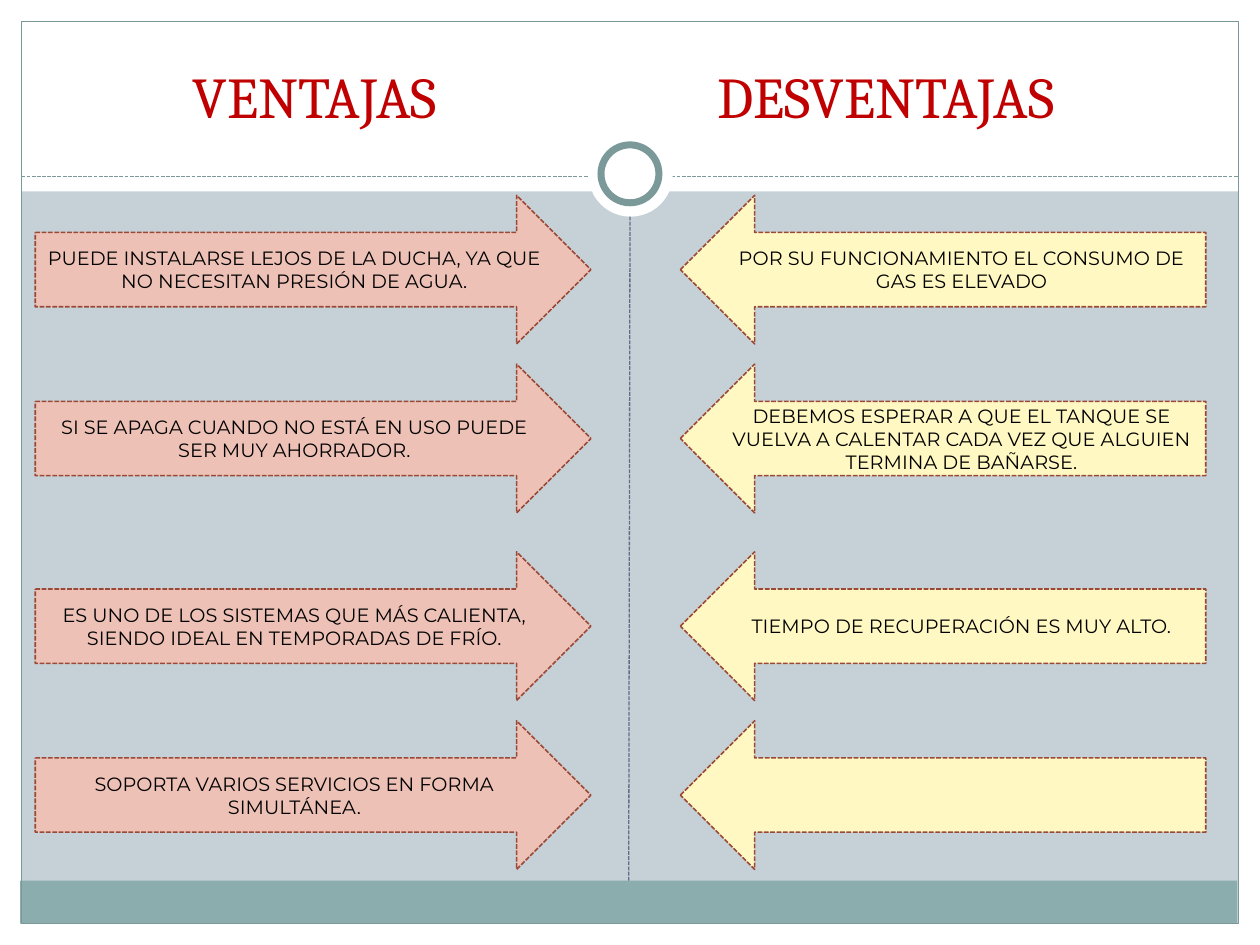
from pptx import Presentation
from pptx.dml.color import RGBColor
from pptx.enum.dml import MSO_LINE
from pptx.enum.shapes import MSO_CONNECTOR, MSO_SHAPE
from pptx.enum.text import MSO_ANCHOR, PP_ALIGN
from pptx.oxml.ns import qn
from pptx.util import Inches, Pt

RECT, OVAL = MSO_SHAPE.RECTANGLE, MSO_SHAPE.OVAL
RIGHT, LEFT = MSO_SHAPE.RIGHT_ARROW, MSO_SHAPE.LEFT_ARROW
DASH = MSO_LINE.SQUARE_DOT
WHITE, TEAL, RUST = "FFFFFF", "7C999A", "9B4936"
TOPS = [1.55, 2.89, 4.38, 5.72]
PROS = [
    "PUEDE INSTALARSE LEJOS DE LA DUCHA, YA QUE NO NECESITAN PRESIÓN DE AGUA.",
    "SI SE APAGA CUANDO NO ESTÁ EN USO PUEDE SER MUY AHORRADOR.",
    "ES UNO DE LOS SISTEMAS QUE MÁS CALIENTA, SIENDO IDEAL EN TEMPORADAS DE FRÍO.",
    "SOPORTA VARIOS SERVICIOS EN FORMA SIMULTÁNEA.",
]
CONS = [
    "POR SU FUNCIONAMIENTO EL CONSUMO DE GAS ES ELEVADO",
    "DEBEMOS ESPERAR A QUE EL TANQUE SE VUELVA A CALENTAR CADA VEZ QUE ALGUIEN TERMINA DE BAÑARSE.",
    "TIEMPO DE RECUPERACIÓN ES MUY ALTO.",
    "",
]


def color(text):
    """Turn a hex string into a colour."""
    return RGBColor.from_string(text)


def stroke(line, hue, width, dash=None):
    """Style an outline or a connector line."""
    line.color.rgb = color(hue)
    line.width = Pt(width)
    if dash:
        line.dash_style = dash


def shape(slide, kind, box, fill=None, hue=None, width=0.75, dash=None):
    """Add a preset shape with optional fill and outline."""
    item = slide.shapes.add_shape(kind, *map(Inches, box))
    item.shadow.inherit = False
    if fill:
        item.fill.solid()
        item.fill.fore_color.rgb = color(fill)
    else:
        item.fill.background()
    if hue:
        stroke(item.line, hue, width, dash)
    else:
        item.line.fill.background()
    return item


def rule(slide, start, end, hue):
    """Add a thin dashed line."""
    line = slide.shapes.add_connector(
        MSO_CONNECTOR.STRAIGHT, *map(Inches, start + end))
    stroke(line.line, hue, 0.75, DASH)
    props = line._element.spPr
    props.append(props.makeelement(qn("a:effectLst"), {}))
    return line


def write(item, text, face, size, hue, anchor):
    """Put one centred paragraph into a shape."""
    frame = item.text_frame
    frame.word_wrap = True
    frame.vertical_anchor = anchor
    para = frame.paragraphs[0]
    para.text = text
    para.alignment = PP_ALIGN.CENTER
    para.font.name = face
    para.font.size = Pt(size)
    para.font.color.rgb = color(hue)


def title(slide, text, left):
    """Add a column heading."""
    box = slide.shapes.add_textbox(*map(Inches, (left, 0.25, 4, 0.83)))
    write(box, text, "Cambria", 33, "C00000", MSO_ANCHOR.BOTTOM)


def column(slide, kind, left, width, fill, texts):
    """Add a column of block arrows."""
    for top, text in zip(TOPS, texts):
        arrow = shape(slide, kind, (left, top, width, 1.18), fill, RUST, 0.9, DASH)
        if text:
            write(arrow, text, "Montserrat", 11, "000000", MSO_ANCHOR.MIDDLE)


def frame(slide):
    """Draw the margins, the footer band, the border and the ring."""
    for box in [(0, 7.33, 10, 0.17), (0, 0, 10, 1.52),
                (0, 0, 0.17, 7.5), (9.83, 0, 0.17, 7.5)]:
        shape(slide, RECT, box, WHITE)
    band = shape(slide, RECT, (0.16, 6.99, 9.66, 0.34), "8CADAE")
    shape(slide, RECT, (0.17, 0.17, 9.66, 7.16), hue=TEAL)
    rule(slide, (0.17, 1.4), (9.83, 1.4), TEAL)
    shape(slide, OVAL, (4.67, 1.05, 0.67, 0.67), WHITE)
    shape(slide, OVAL, (4.77, 1.15, 0.46, 0.46), WHITE, TEAL, 4)
    split = rule(slide, (4.99, 6.99), (5, 1.72), "646B86")
    split.begin_connect(band, 0)


def main():
    """Build and save the slide."""
    deck = Presentation()
    deck.slide_width, deck.slide_height = Inches(10), Inches(7.5)
    slide = deck.slides.add_slide(deck.slide_layouts[6])
    back = slide.background.fill
    back.solid()
    back.fore_color.rgb = color("C5D1D7")
    frame(slide)
    title(slide, "VENTAJAS", 0.5)
    title(slide, "DESVENTAJAS", 5.03)
    column(slide, RIGHT, 0.28, 4.41, "EDC1B6", PROS)
    column(slide, LEFT, 5.4, 4.17, "FFF8C2", CONS)
    deck.save("out.pptx")


if __name__ == "__main__":
    main()
